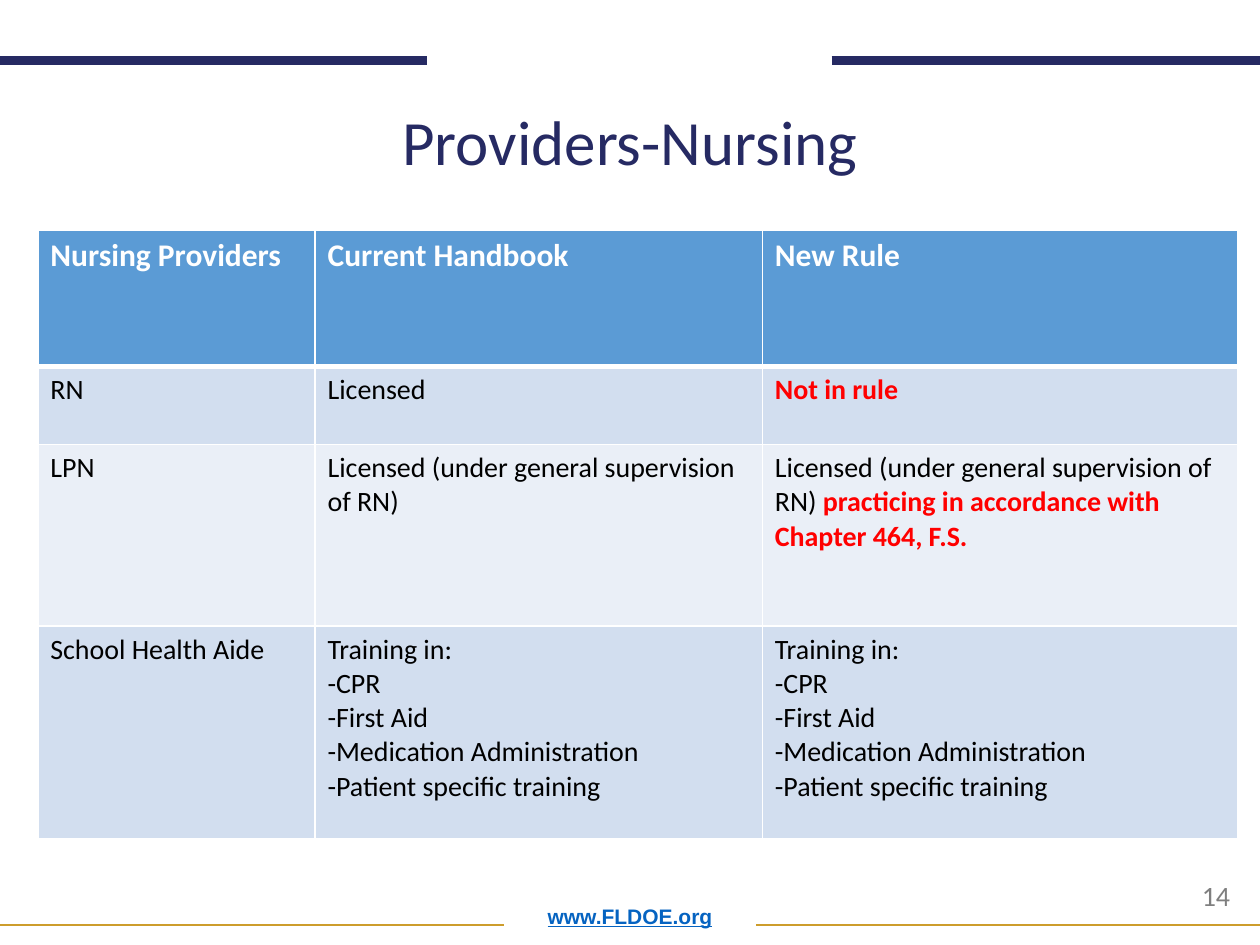
"""Build the slide that compares nursing provider requirements."""

from dataclasses import dataclass

import pptx
import pptx.dml.color
import pptx.enum.shapes
import pptx.enum.text
import pptx.oxml
import pptx.oxml.ns
import pptx.slide
import pptx.table
import pptx.text.text
import pptx.util

Inches = pptx.util.Inches
Anchor = pptx.enum.text.MSO_ANCHOR
Align = pptx.enum.text.PP_ALIGN

COLORS = {
    "navy": "262A63",
    "gold": "CD9D2C",
    "link": "0563C1",
    "gray": "7F7F7F",
    "white": "FFFFFF",
    "black": "000000",
    "red": "FF0000",
    "header": "5B9BD5",
    "band_dark": "D2DEEF",
    "band_light": "EAEFF7",
}


@dataclass(frozen=True)
class Rule:
    start: float
    end: float
    y: float
    color: str
    weight: float


@dataclass(frozen=True)
class Label:
    text: str
    left: float
    top: float
    width: float
    height: float
    size: float
    color: str
    font: str = "Calibri"
    bold: bool = False
    underline: bool = False
    centered: bool = True


@dataclass(frozen=True)
class Entry:
    text: str = ""
    change: str = ""


@dataclass(frozen=True)
class Row:
    height: float
    fill: str
    entries: tuple[Entry, ...]
    header: bool = False


RULES = (
    Rule(0, 3.39, 0.48, "navy", 5),
    Rule(6.6, 10, 0.48, "navy", 5),
    Rule(0, 4, 7.34, "gold", 1),
    Rule(6, 10, 7.34, "gold", 1),
)

LABELS = (
    Label("www.FLDOE.org", 0.69, 7, 8.62, 0.42, 12, "link", "Arial", True, True),
    Label("14", 9.44, 6.92, 0.52, 0.37, 16, "gray", centered=False),
    Label("Providers-Nursing", 0.69, 0.9, 8.62, 0.57, 36, "navy"),
)

TRAINING = Entry(
    "Training in:\n-CPR\n-First Aid\n-Medication Administration\n-Patient specific training"
)
SUPERVISED = "Licensed (under general supervision of RN)"

COLUMN_WIDTHS = (2.2, 3.55, 3.77)
ROWS = (
    Row(
        1.08,
        "header",
        (Entry("Nursing Providers"), Entry("Current Handbook"), Entry("New Rule")),
        True,
    ),
    Row(0.62, "band_dark", (Entry("RN"), Entry("Licensed"), Entry(change="Not in rule"))),
    Row(
        1.44,
        "band_light",
        (
            Entry("LPN"),
            Entry(SUPERVISED),
            Entry(SUPERVISED + " ", "practicing in accordance with Chapter 464, F.S."),
        ),
    ),
    Row(1.69, "band_dark", (Entry("School Health Aide"), TRAINING, TRAINING)),
)


def rgb(name: str) -> pptx.dml.color.RGBColor:
    """Return the named colour."""
    return pptx.dml.color.RGBColor.from_string(COLORS[name])


def style_font(
    font: pptx.text.text.Font, name: str, size: float, color: str, bold: bool
) -> None:
    """Set the face, size, colour and weight of a font."""
    font.name = name
    font.size = pptx.util.Pt(size)
    font.bold = bold
    font.color.rgb = rgb(color)


def draw_rule(slide: pptx.slide.Slide, rule: Rule) -> None:
    """Draw a horizontal rule without a shadow."""
    connector = slide.shapes.add_connector(
        pptx.enum.shapes.MSO_CONNECTOR.STRAIGHT,
        Inches(rule.start), Inches(rule.y), Inches(rule.end), Inches(rule.y),
    )
    connector.line.color.rgb = rgb(rule.color)
    connector.line.width = pptx.util.Pt(rule.weight)
    properties = connector._element.spPr
    properties.append(pptx.oxml.parse_xml(f"<a:effectLst {pptx.oxml.ns.nsdecls('a')}/>"))


def draw_label(slide: pptx.slide.Slide, label: Label) -> None:
    """Draw a single line of text."""
    shape = slide.shapes.add_textbox(
        Inches(label.left), Inches(label.top), Inches(label.width), Inches(label.height)
    )
    text_frame = shape.text_frame
    text_frame.word_wrap = True
    text_frame.text = label.text
    paragraph = text_frame.paragraphs[0]
    if label.centered:
        text_frame.vertical_anchor = Anchor.BOTTOM
        paragraph.alignment = Align.CENTER
        paragraph.line_spacing = 0.9
    font = paragraph.runs[0].font
    style_font(font, label.font, label.size, label.color, label.bold)
    font.underline = label.underline


def set_borders(cell: pptx.table._Cell, top: float, bottom: float) -> None:
    """Give a cell white borders of the stated weights in points."""
    properties = cell._tc.get_or_add_tcPr()
    for side, weight in (("L", 1), ("R", 1), ("T", top), ("B", bottom)):
        properties.append(pptx.oxml.parse_xml(
            f'<a:ln{side} {pptx.oxml.ns.nsdecls("a")} w="{pptx.util.Pt(weight)}">'
            f'<a:solidFill><a:srgbClr val="{COLORS["white"]}"/></a:solidFill></a:ln{side}>'
        ))


def fill_cell(cell: pptx.table._Cell, entry: Entry, row: Row) -> None:
    """Write an entry into a cell, with rule changes in bold red."""
    cell.fill.solid()
    cell.fill.fore_color.rgb = rgb(row.fill)
    size, color = (18, "white") if row.header else (16, "black")
    cell.text_frame.text = entry.text
    for paragraph in cell.text_frame.paragraphs:
        for run in paragraph.runs:
            style_font(run.font, "Calibri", size, color, row.header)
    if entry.change:
        run = cell.text_frame.paragraphs[-1].add_run()
        run.text = entry.change
        style_font(run.font, "Calibri", size, "red", True)


def draw_table(slide: pptx.slide.Slide) -> None:
    """Draw the provider comparison table."""
    table = slide.shapes.add_table(
        len(ROWS), len(COLUMN_WIDTHS), Inches(0.3), Inches(1.83),
        Inches(sum(COLUMN_WIDTHS)), Inches(sum(row.height for row in ROWS)),
    ).table
    for column, width in zip(table.columns, COLUMN_WIDTHS):
        column.width = Inches(width)
    for index, row in enumerate(ROWS):
        table.rows[index].height = Inches(row.height)
        for cell, entry in zip(table.rows[index].cells, row.entries):
            set_borders(cell, 3 if index == 1 else 1, 3 if row.header else 1)
            fill_cell(cell, entry, row)


def main() -> None:
    """Build and save the presentation."""
    presentation = pptx.Presentation()
    presentation.slide_width = Inches(10)
    presentation.slide_height = Inches(7.5)
    slide = presentation.slides.add_slide(presentation.slide_layouts[6])
    for rule in RULES:
        draw_rule(slide, rule)
    draw_table(slide)
    for label in LABELS:
        draw_label(slide, label)
    presentation.save("out.pptx")


if __name__ == "__main__":
    main()
